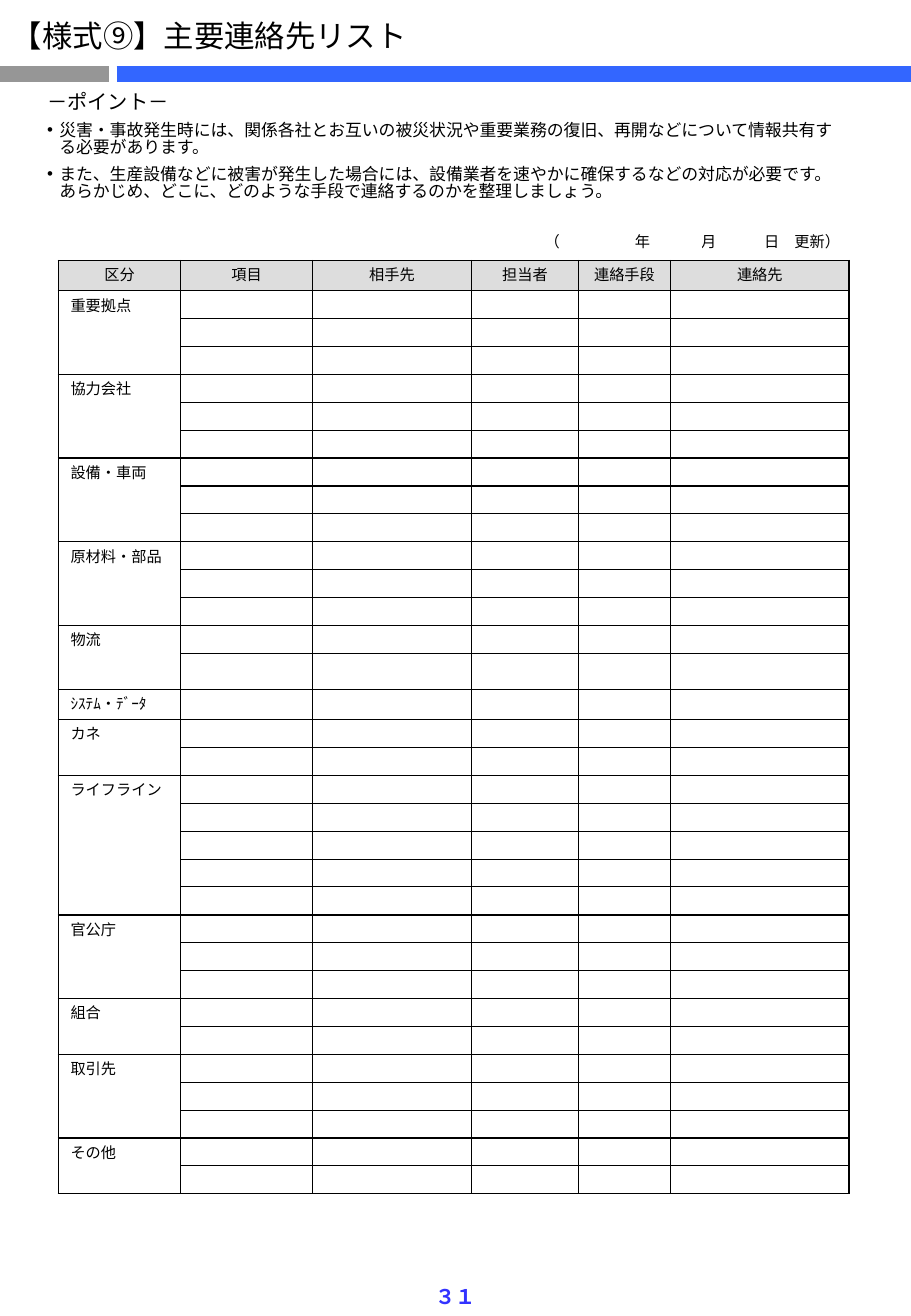
from dataclasses import dataclass
from itertools import accumulate

from lxml import etree
from pptx import Presentation
from pptx.dml.color import RGBColor
from pptx.enum import shapes, text
from pptx.oxml import ns
from pptx.util import Pt

FONT = "Noto Sans CJK JP"
COLORS = {"ink": "000000", "gray": "969696", "blue": "3366FF",
          "page": "3333FF", "header": "DDDDDD"}
LEFT, CENTER, RIGHT = (text.PP_ALIGN.LEFT, text.PP_ALIGN.CENTER,
                       text.PP_ALIGN.RIGHT)
THIN, THICK, HAIR = 0.75, 1, 0.5
ROW_H, TALL_ROW_H, LAST_LOGISTICS_H = 16.53, 18, 21.3


@dataclass
class Box:
    left: float
    top: float
    width: float
    height: float

    def lengths(self):
        return [Pt(v) for v in (self.left, self.top, self.width, self.height)]


@dataclass
class Bar:
    start: float
    end: float
    color: str


@dataclass
class Group:
    name: str
    rows: int


BARS = [Bar(0, 64.8, "gray"), Bar(69.1, 540, "blue")]
HEADERS = ["区分", "項目", "相手先", "担当者", "連絡手段", "連絡先"]
CONTACT_COLS = [72.6, 78, 94.3, 63.4, 54.6, 105.9]
GROUPS = [Group("重要拠点", 3), Group("協力会社", 3), Group("設備・車両", 3),
          Group("原材料・部品", 3), Group("物流", 2), Group("ｼｽﾃﾑ・ﾃﾞｰﾀ", 1),
          Group("カネ", 2), Group("ライフライン", 5), Group("官公庁", 3),
          Group("組合", 2), Group("取引先", 3), Group("その他", 2)]
DATE_COLS = [28.1, 42.5, 13, 28.1, 9.4, 28.1, 54.7]
DATE_CELLS = [("（", RIGHT), ("", LEFT), ("年", CENTER), ("", LEFT),
              ("月", CENTER), ("", LEFT), ("日　更新）", LEFT)]
POINTS = [
    "災害・事故発生時には、関係各社とお互いの被災状況や重要業務の復旧、再開などについて情報共有する必要があります。",
    "また、生産設備などに被害が発生した場合には、設備業者を速やかに確保するなどの対応が必要です。"
    "あらかじめ、どこに、どのような手段で連絡するのかを整理しましょう。",
]


def write(p, content: str, size: float = 9, color: str = "ink",
          bold: bool = False, align=LEFT, before: float = 0,
          after: float = 0, spacing: float = 1.0) -> None:
    p.alignment = align
    p.space_before, p.space_after = Pt(before), Pt(after)
    p.line_spacing = spacing
    if not content:
        etree.SubElement(p._p, ns.qn("a:endParaRPr"), sz=str(int(size * 100)))
        return
    r = p.add_run()
    r.text = content
    r.font.size, r.font.bold, r.font.name = Pt(size), bold, FONT
    r.font.color.rgb = RGBColor.from_string(COLORS[color])
    etree.SubElement(r._r.get_or_add_rPr(), ns.qn("a:ea"), typeface=FONT)


def add_text_frame(slide, box: Box, top_inset: float, wrap: bool = False):
    tf = slide.shapes.add_textbox(*box.lengths()).text_frame
    tf.word_wrap = wrap
    tf.margin_top, tf.margin_bottom = Pt(top_inset), Pt(0)
    return tf


def hang(p, bullet: str = "") -> None:
    """Give the paragraph a hanging indent and, if named, a bullet."""
    pPr = p._p.get_or_add_pPr()
    pPr.set("marL", str(Pt(7.2)))
    pPr.set("indent", str(-Pt(7.2)))
    if bullet:
        etree.SubElement(pPr, ns.qn("a:buFont"), typeface="Arial")
        etree.SubElement(pPr, ns.qn("a:buChar"), char=bullet)


def add_bar(slide, bar: Bar) -> None:
    y = Pt(43.9)
    line = slide.shapes.add_connector(
        shapes.MSO_CONNECTOR.STRAIGHT, Pt(bar.start), y, Pt(bar.end), y)
    line.line.width = Pt(10)
    line.line.color.rgb = RGBColor.from_string(COLORS[bar.color])
    etree.SubElement(line._element.spPr, ns.qn("a:effectLst"))


def add_plain_table(slide, box: Box, cols: list[float], rows: list[float]):
    table = slide.shapes.add_table(len(rows), len(cols), *box.lengths()).table
    table.first_row = table.horz_banding = False
    for column, width in zip(table.columns, cols):
        column.width = Pt(width)
    for row, height in zip(table.rows, rows):
        row.height = Pt(height)
    return table


def fill_cell(cell, content: str, align=LEFT, side: float = 7.2,
              color: str = "") -> None:
    cell.margin_left = cell.margin_right = Pt(side)
    cell.margin_top = cell.margin_bottom = Pt(1.6)
    if color:
        cell.fill.solid()
        cell.fill.fore_color.rgb = RGBColor.from_string(COLORS[color])
    else:
        cell.fill.background()
    write(cell.text_frame.paragraphs[0], content, align=align,
          before=1.8 if content else 0)


def set_borders(cell, **weights: float) -> None:
    """Draw the sides given by L, R, T and B; a weight of 0 is skipped."""
    tcPr = cell._tc.get_or_add_tcPr()
    for side, weight in weights.items():
        if weight:
            ln = etree.SubElement(tcPr, ns.qn(f"a:ln{side}"), w=str(Pt(weight)))
            fill = etree.SubElement(ln, ns.qn("a:solidFill"))
            etree.SubElement(fill, ns.qn("a:srgbClr"), val=COLORS["ink"])


def add_contact_table(slide) -> None:
    starts = list(accumulate((g.rows for g in GROUPS), initial=1))
    first_row = {g.name: start for g, start in zip(GROUPS, starts)}
    count = starts[-1]
    heights = [ROW_H] * count
    heights[0] = heights[first_row["ｼｽﾃﾑ・ﾃﾞｰﾀ"]] = TALL_ROW_H
    heights[first_row["物流"] + 1] = LAST_LOGISTICS_H
    table = add_plain_table(slide, Box(34.6, 154.3, sum(CONTACT_COLS), sum(heights)),
                            CONTACT_COLS, heights)

    def rule_weight(row: int, col: int) -> float:
        """Weight of the horizontal rule above the row."""
        if col == 0 and row and row not in starts:
            return 0
        if row in starts or (row == 2 and col <= 3):
            return THICK
        return HAIR if row == first_row["組合"] + 1 else THIN

    labels = {start: g.name for g, start in zip(GROUPS, starts)}
    last = len(HEADERS) - 1
    for row in range(count):
        for col, header in enumerate(HEADERS):
            cell = table.cell(row, col)
            is_label = col == 0 and row in labels
            set_borders(cell, L=THIN if col else THICK,
                        R=THICK if col == last else THIN,
                        T=rule_weight(row, col),
                        B=THICK if is_label else rule_weight(row + 1, col))
            if row == 0:
                fill_cell(cell, header, CENTER, color="header")
            else:
                fill_cell(cell, labels[row] if is_label else "")
    for group, start in zip(GROUPS, starts):
        if group.rows > 1:
            table.cell(start, 0).merge(table.cell(start + group.rows - 1, 0))


def add_date_table(slide) -> None:
    table = add_plain_table(slide, Box(303.8, 134.4, sum(DATE_COLS), ROW_H),
                            DATE_COLS, [ROW_H])
    for col, (content, align) in enumerate(DATE_CELLS):
        fill_cell(table.cell(0, col), content, align, side=0)


def add_points(slide) -> None:
    tf = add_text_frame(slide, Box(20.9, 50.4, 487.4, 82), 4.8, wrap=True)
    p = tf.paragraphs[0]
    write(p, "－ポイント－", size=12, after=6, spacing=0.83)
    hang(p)
    for point in POINTS:
        p = tf.add_paragraph()
        write(p, point, size=10, after=6, spacing=0.83)
        hang(p, "•")


def main() -> None:
    prs = Presentation()
    prs.slide_width, prs.slide_height = Pt(540), Pt(779.8)
    slide = prs.slides.add_slide(prs.slide_layouts[6])
    for bar in BARS:
        add_bar(slide, bar)
    title = add_text_frame(slide, Box(0, 9, 250.6, 28.8), 1.4)
    write(title.paragraphs[0], "【様式⑨】主要連絡先リスト", size=18)
    add_contact_table(slide)
    page = add_text_frame(slide, Box(250.6, 759.6, 38.9, 20), 1.6)
    write(page.paragraphs[0], "３１", size=12, color="page", bold=True, align=CENTER)
    add_points(slide)
    add_date_table(slide)
    prs.save("out.pptx")


if __name__ == "__main__":
    main()
